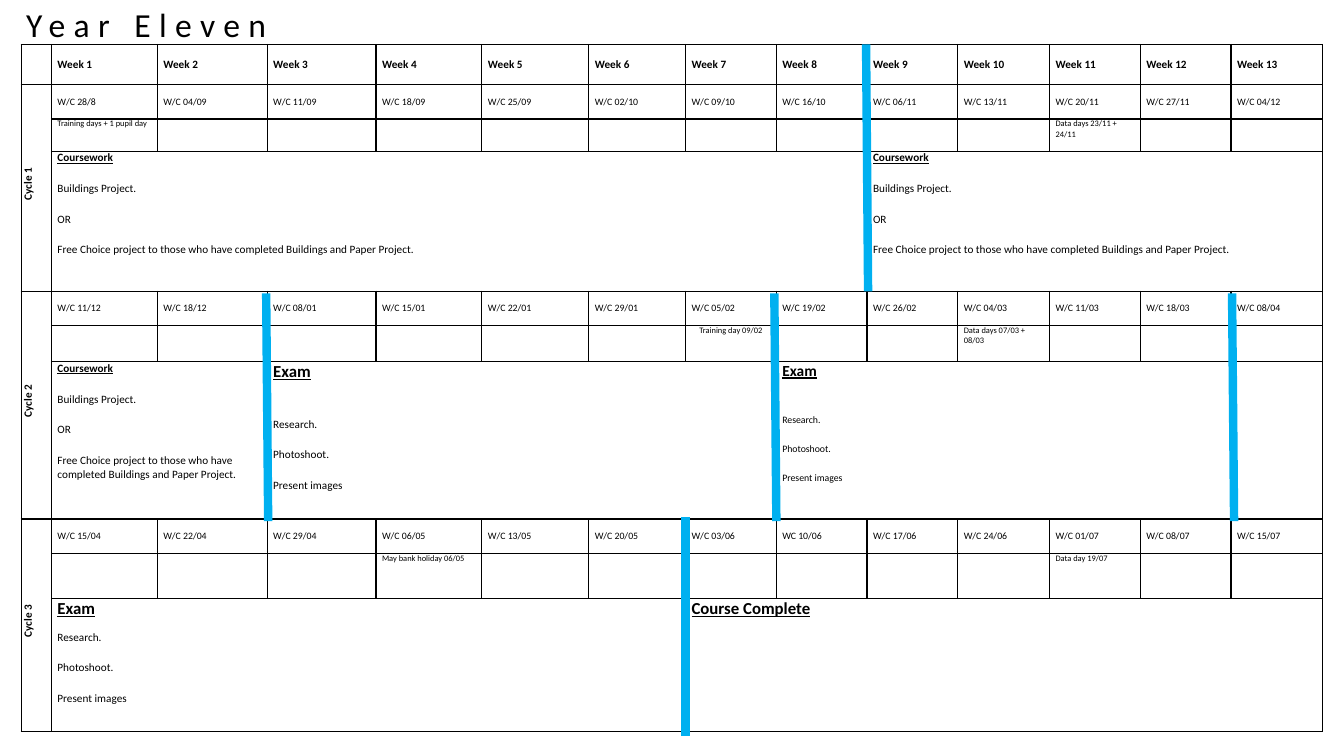
"""Build the Year Eleven curriculum calendar slide."""
from lxml.etree import SubElement
from pptx import Presentation
from pptx.dml.color import RGBColor
from pptx.enum.shapes import MSO_CONNECTOR
from pptx.enum.text import MSO_ANCHOR, PP_ALIGN
from pptx.oxml.ns import qn
from pptx.util import Pt

PX = 9144
BLACK = RGBColor(0, 0, 0)
WHITE = RGBColor(255, 255, 255)
BLUE = RGBColor(0x00, 0xB0, 0xF0)

COLS = [30, 105, 109, 108, 105, 106, 96, 90, 90, 90, 91, 90, 90, 91]
ROWS = [40, 34, 32, 139, 34, 36, 156, 34, 45, 132]
DATES = [
    ["28/8", "04/09", "11/09", "18/09", "25/09", "02/10", "09/10",
     "16/10", "06/11", "13/11", "20/11", "27/11", "04/12"],
    ["11/12", "18/12", "08/01", "15/01", "22/01", "29/01", "05/02",
     "19/02", "26/02", "04/03", "11/03", "18/03", "08/04"],
    ["15/04", "22/04", "29/04", "06/05", "13/05", "20/05", "03/06",
     "10/06", "17/06", "24/06", "01/07", "08/07", "15/07"],
]
NOTES = [
    (2, 1, "Training days + 1 pupil day", PP_ALIGN.LEFT),
    (2, 11, "Data days 23/11 + 24/11", PP_ALIGN.LEFT),
    (5, 7, "Training day 09/02", PP_ALIGN.CENTER),
    (5, 10, "Data days 07/03 + 08/03", PP_ALIGN.LEFT),
    (8, 4, "May bank holiday 06/05", PP_ALIGN.LEFT),
    (8, 11, "Data day 19/07", PP_ALIGN.LEFT),
]
WORK = ["Buildings Project.", "OR",
        "Free Choice project to those who have completed Buildings and Paper Project."]
EXAM = ["Research.", "Photoshoot.", "Present images"]
BLOCKS = [
    (3, 1, 8, "Coursework", 8, 6, WORK, 8),
    (3, 9, 5, "Coursework", 8, 6, WORK, 8),
    (6, 1, 2, "Coursework", 8, 6, WORK, 8),
    (6, 3, 5, "Exam", 12, 19, EXAM, 8),
    (6, 8, 5, "Exam", 11, 18, EXAM, 7),
    (9, 1, 6, "Exam", 12, 2, EXAM, 8),
    (9, 7, 7, "Course Complete", 12, 2, [], 8),
]
BREAKS = [(859, 44, 861, 289), (264, 291, 266, 517), (768, 291, 770, 517),
          (680, 513, 680, 730), (1222, 291, 1224, 517)]


def write(frame, *lines, size=8, bold=False, under=False, align=PP_ALIGN.LEFT,
          before=0, after=0, indent=0, track=0):
    """Add formatted paragraphs, filling the first one if it is empty."""
    for line in lines:
        para = frame.paragraphs[0] if not frame.text else frame.add_paragraph()
        para.alignment = align
        para.space_before, para.space_after = Pt(before), Pt(after)
        if indent:
            para._p.get_or_add_pPr().set("marL", str(indent * PX))
        if not line:
            SubElement(para._p, qn("a:endParaRPr"), sz=str(size * 100))
            continue
        run = para.add_run()
        run.text = line
        font = run.font
        font.name, font.size = "Calibri", Pt(size)
        font.bold, font.underline = bold, under
        font.color.rgb = BLACK
        if track:
            run._r.get_or_add_rPr().set("spc", str(track * 100))


class Page:
    """Hold the deck, the slide and its style."""

    def __init__(self):
        """Open a blank titled slide."""
        self.deck = Presentation()
        self.deck.slide_width, self.deck.slide_height = 1333 * PX, 750 * PX
        self.slide = self.deck.slides.add_slide(self.deck.slide_layouts[5])

    def title(self, words, x, y, w, h):
        """Place the slide title."""
        shape = self.slide.shapes.title
        shape.left, shape.top = x * PX, y * PX
        shape.width, shape.height = w * PX, h * PX
        shape.text_frame.vertical_anchor = MSO_ANCHOR.TOP
        write(shape.text_frame, words, size=24, track=6)

    def grid(self, x, y, cols, rows, spans):
        """Add a bordered white table with merged cells."""
        frame = self.slide.shapes.add_table(
            len(rows), len(cols), x * PX, y * PX, sum(cols) * PX, sum(rows) * PX)
        table = frame.table
        table.first_row = table.horz_banding = False
        for col, size in zip(table.columns, cols):
            col.width = size * PX
        for row, size in zip(table.rows, rows):
            row.height = size * PX
        for top, left, end, right in spans:
            table.cell(top, left).merge(table.cell(end, right))
        for cell in table.iter_cells():
            self.style(cell)
        return table

    def style(self, cell):
        """Set the margins, border and fill of a cell."""
        cell.margin_left = cell.margin_right = 6 * PX
        cell.margin_top = cell.margin_bottom = 0
        props = cell._tc.get_or_add_tcPr()
        for side in ("lnL", "lnR", "lnT", "lnB"):
            edge = SubElement(props, qn(f"a:{side}"), w=str(Pt(1)))
            fill = SubElement(edge, qn("a:solidFill"))
            SubElement(fill, qn("a:srgbClr"), val=str(BLACK))
        cell.fill.solid()
        cell.fill.fore_color.rgb = WHITE
        write(cell.text_frame, "", size=6)

    def label(self, cell, words, turn=False, **form):
        """Write a vertically centred label, turned upwards on request."""
        cell.vertical_anchor = MSO_ANCHOR.MIDDLE
        if turn:
            cell._tc.get_or_add_tcPr().set("vert", "vert270")
        write(cell.text_frame, words, **form)

    def line(self, x1, y1, x2, y2):
        """Draw a thick blue break line."""
        line = self.slide.shapes.add_connector(
            MSO_CONNECTOR.STRAIGHT, x1 * PX, y1 * PX, x2 * PX, y2 * PX)
        line.line.color.rgb = BLUE
        line.line.width = Pt(6)
        SubElement(line._element.spPr, qn("a:effectLst"))


def main():
    """Compose and save the slide."""
    page = Page()
    spans = [(top, 0, top + 2, 0) for top in (1, 4, 7)]
    spans += [(row, col, row, col + wide - 1) for row, col, wide, *_ in BLOCKS]
    table = page.grid(21, 44, COLS, ROWS, spans)
    for week in range(1, 14):
        page.label(table.cell(0, week), f"Week {week}", bold=True)
    for cycle, dates in enumerate(DATES):
        top = 1 + 3 * cycle
        page.label(table.cell(top, 0), f"Cycle {cycle + 1}", turn=True,
                   bold=True, align=PP_ALIGN.CENTER, indent=8)
        for col, date in enumerate(dates, 1):
            mark = "WC" if date == "10/06" else "W/C"
            page.label(table.cell(top, col), f"{mark} {date}", size=7)
    for row, col, words, align in NOTES:
        write(table.cell(row, col).text_frame, words, size=6, align=align,
              before=2, after=2)
    for row, col, _, head, big, gap, items, size in BLOCKS:
        frame = table.cell(row, col).text_frame
        write(frame, head, size=big, bold=True, under=True, before=2, after=gap)
        write(frame, *items, size=size, before=6, after=6)
    for ends in BREAKS:
        page.line(*ends)
    page.title("Year Eleven", 16, -1, 443, 50)
    page.deck.save("out.pptx")


if __name__ == "__main__":
    main()
